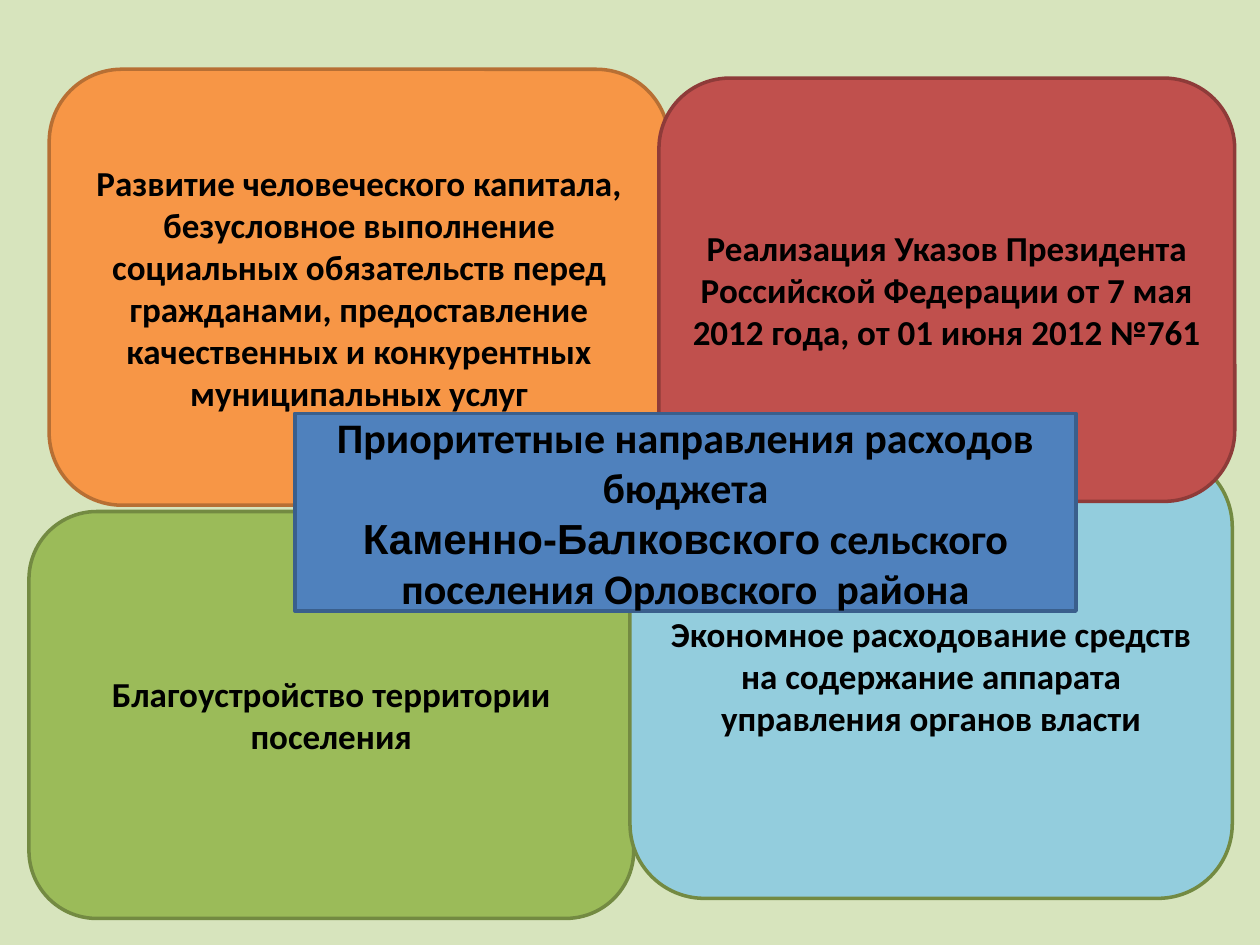
from dataclasses import dataclass

from pptx import Presentation
from pptx.dml.color import RGBColor
from pptx.enum import shapes, text
from pptx.util import Inches, Pt


@dataclass(frozen=True)
class Theme:
    background: str = "D7E4BD"
    ink: str = "000000"
    orange: tuple = ("F79646", "B76F34")
    green: tuple = ("9BBB59", "738A42")
    aqua: tuple = ("93CDDD", "738A42")
    red: tuple = ("C0504D", "8E3B39")
    blue: tuple = ("4F81BD", "3A5F8C")
    font: str = "Calibri"
    name_font: str = "Arial"
    card_size: int = 20
    title_size: int = 24
    outline: int = 2


THEME = Theme()

CARDS = [
    ((0.39, 0.55, 4.92, 3.46), THEME.orange,
     "Развитие человеческого капитала, безусловное выполнение социальных "
     "обязательств перед гражданами, предоставление качественных и "
     "конкурентных муниципальных услуг"),
    ((0.23, 4.06, 4.8, 3.23), THEME.green,
     "Благоустройство территории поселения"),
    ((5, 3.59, 4.78, 3.54), THEME.aqua,
     "Экономное расходование средств на содержание аппарата управления "
     "органов власти"),
    ((5.23, 0.62, 4.57, 3.36), THEME.red,
     "Реализация Указов Президента Российской Федерации от 7 мая 2012 года, "
     "от 01 июня 2012 №761"),
]


def paint(box, colours):
    fill, line = colours
    box.fill.solid()
    box.fill.fore_color.rgb = RGBColor.from_string(fill)
    box.line.color.rgb = RGBColor.from_string(line)
    box.line.width = Pt(THEME.outline)


def format_text(frame, size):
    frame.word_wrap = True
    frame.auto_size = text.MSO_AUTO_SIZE.NONE
    frame.vertical_anchor = text.MSO_ANCHOR.MIDDLE
    for para in frame.paragraphs:
        para.alignment = text.PP_ALIGN.CENTER
        for span in para.runs:
            span.font.name = THEME.font
            span.font.size = Pt(size)
            span.font.bold = True
            span.font.color.rgb = RGBColor.from_string(THEME.ink)


def add_card(page, place, colours, wording):
    card = page.shapes.add_shape(
        shapes.MSO_SHAPE.ROUNDED_RECTANGLE, *map(Inches, place))
    card.shadow.inherit = False
    paint(card, colours)
    card.text_frame.text = wording
    format_text(card.text_frame, THEME.card_size)


def place_title(page):
    title = page.shapes.title
    title.left, title.top, title.width, title.height = map(
        Inches, (2.34, 3.28, 6.2, 1.57))
    paint(title, THEME.blue)
    frame = title.text_frame
    frame.text = "Приоритетные направления расходов бюджета"
    para = frame.add_paragraph()
    settlement = para.add_run()
    settlement.text = "Каменно-Балковского"
    para.add_run().text = " сельского поселения Орловского  района"
    format_text(frame, THEME.title_size)
    settlement.font.name = THEME.name_font
    page.shapes.element.append(title.element)


def main():
    deck = Presentation()
    deck.slide_width, deck.slide_height = Inches(10), Inches(7.5)
    page = deck.slides.add_slide(deck.slide_layouts.get_by_name("Title Only"))
    page.background.fill.solid()
    page.background.fill.fore_color.rgb = RGBColor.from_string(THEME.background)
    for place, colours, wording in CARDS:
        add_card(page, place, colours, wording)
    place_title(page)
    deck.save("out.pptx")


if __name__ == "__main__":
    main()
